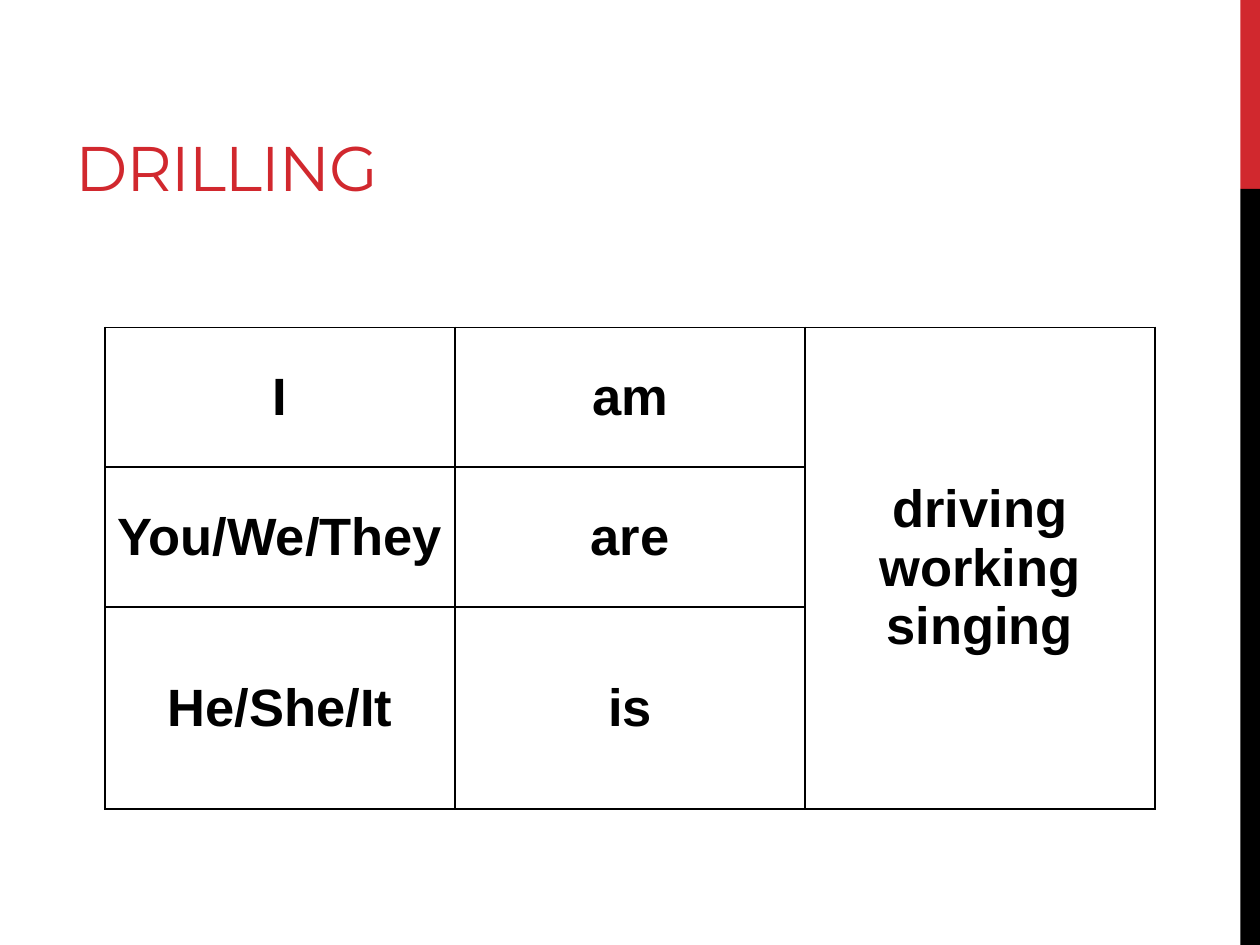
import dataclasses

import pptx
import pptx.dml.color
import pptx.enum.shapes
import pptx.enum.text
import pptx.oxml
import pptx.oxml.ns
import pptx.util

Pt = pptx.util.Pt
Anchor = pptx.enum.text.MSO_ANCHOR


@dataclasses.dataclass(frozen=True)
class Theme:
    red: str = "D1282E"
    black: str = "000000"
    head_font: str = "Montserrat"
    body_font: str = "Arial"
    head_size: float = 36
    body_size: float = 30
    rule: float = 1


def rgb(code):
    return pptx.dml.color.RGBColor.from_string(code)


class Deck:
    def __init__(self, theme):
        self.theme = theme
        self.file = pptx.Presentation()
        self.file.slide_width, self.file.slide_height = Pt(720), Pt(540)
        self.slide = self.file.slides.add_slide(self.file.slide_layouts[6])

    def style(self, font, name, size, color, bold=False):
        font.name, font.size, font.bold = name, Pt(size), bold
        font.color.rgb = rgb(color)

    def bar(self, left, top, width, height, color):
        kind = pptx.enum.shapes.MSO_SHAPE.RECTANGLE
        box = map(Pt, (left, top, width, height))
        shape = self.slide.shapes.add_shape(kind, *box)
        shape.shadow.inherit = False
        shape.fill.solid()
        shape.fill.fore_color.rgb = rgb(color)
        shape.line.fill.background()

    def title(self, text, left, top, width, height):
        box = map(Pt, (left, top, width, height))
        frame = self.slide.shapes.add_textbox(*box).text_frame
        frame.word_wrap = True
        frame.vertical_anchor = Anchor.BOTTOM
        para = frame.paragraphs[0]
        run = para.add_run()
        run.text = text
        look = self.theme
        self.style(para.font, look.head_font, look.head_size, look.red)
        run.font._element.set("spc", "-60")

    def border(self, cell):
        """Draw all four sides of a cell, ahead of its fill."""
        props = cell._tc.get_or_add_tcPr()
        for spot, side in enumerate(("lnL", "lnR", "lnT", "lnB")):
            line = pptx.oxml.parse_xml(
                f'<a:{side} {pptx.oxml.ns.nsdecls("a")} w="{Pt(self.theme.rule)}">'
                f'<a:solidFill><a:srgbClr val="{self.theme.black}"/></a:solidFill>'
                f'</a:{side}>'
            )
            props.insert(spot, line)

    def label(self, cell, text):
        look = self.theme
        cell.vertical_anchor = Anchor.MIDDLE
        cell.text = text
        for para in cell.text_frame.paragraphs:
            para.alignment = pptx.enum.text.PP_ALIGN.CENTER
            self.style(para.font, look.body_font, look.body_size, look.black, True)

    def table(self, pairs, verbs, left, top, wide, high):
        """Set pairs row by row beside one tall cell of verbs."""
        rows, cols = len(pairs), 3
        frame = self.slide.shapes.add_table(
            rows, cols, Pt(left), Pt(top), Pt(cols * wide), Pt(rows * high)
        )
        grid = frame.table
        grid.first_row = grid.horz_banding = False
        for cell in grid.iter_cells():
            cell.fill.background()
            self.border(cell)
        for row, pair in enumerate(pairs):
            for col, text in enumerate(pair):
                self.label(grid.cell(row, col), text)
        tall = grid.cell(0, cols - 1)
        tall.merge(grid.cell(rows - 1, cols - 1))
        self.label(tall, "\n".join(verbs))


def main():
    theme = Theme()
    deck = Deck(theme)
    deck.bar(708.75, 0, 11.25, 108, theme.red)
    deck.bar(708.75, 108, 11.25, 432, theme.black)
    deck.title("DRILLING", 36, 12, 456, 108)
    deck.table(
        [("I", "am"), ("You/We/They", "are"), ("He/She/It", "is")],
        ["driving", "working", "singing"],
        left=60, top=187, wide=200, high=80,
    )
    deck.file.save("out.pptx")


if __name__ == "__main__":
    main()
